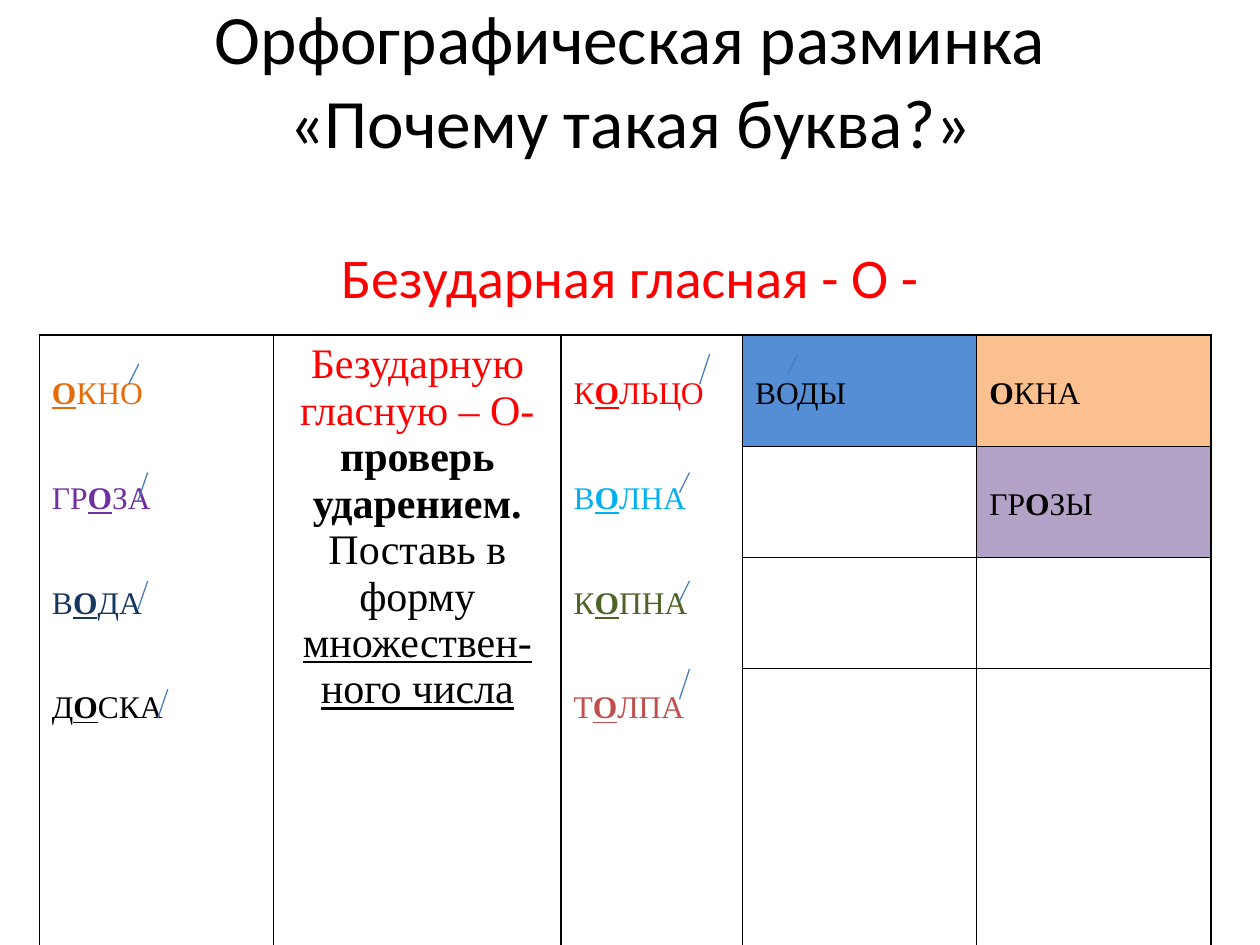
import pptx
import pptx.util
import pptx.dml.color
import pptx.enum.shapes
import pptx.enum.text
import pptx.oxml.ns
from dataclasses import dataclass
from lxml import etree

Pt = pptx.util.Pt
RGB = pptx.dml.color.RGBColor
CENTER = pptx.enum.text.PP_ALIGN.CENTER
ANCHOR = pptx.enum.text.MSO_ANCHOR
qn = pptx.oxml.ns.qn


@dataclass(frozen=True)
class Theme:
    sans: str = "Calibri"
    serif: str = "Times New Roman"
    black: str = "000000"
    red: str = "FF0000"
    mark: str = "4B7EBC"
    title: float = 39.6
    sub: float = 32
    rule: float = 24
    word: float = 18


T = Theme()
VOWEL = "О"
COLS = [133.9, 164.2, 103.7, 133.9, 133.9]
ROWS = [63.5, 63.5, 63.5, 160]
WORD_TOP, WORD_GAP = 23.5, 40
SLANT = 5.7

# Each word: before and after the vowel, colour, stress mark (left, top, height)
LEFT = [
    ("", "КНО", "E46C0A", (51.1, 16.5, 11.5)),
    ("ГР", "ЗА", "7030A0", (56.2, 78.5, 16.6)),
    ("В", "ДА", "17375E", (56.2, 140.5, 16.6)),
    ("Д", "СКА", T.black, (67.7, 202.3, 16.6)),
]
RIGHT = [
    ("К", "ЛЬЦО", T.red, (79.2, 10.8, 17.3)),
    ("В", "ЛНА", "00B0F0", (67.7, 78.5, 11.5)),
    ("К", "ПНА", "4F6228", (67.7, 140.5, 11.5)),
    ("Т", "ЛПА", "C0504D", (67.7, 190.8, 17.3)),
]
RULE = [
    ("Безударную гласную – О- ", dict(color=T.red)),
    ("проверь ударением. ", dict(bold=True)),
    ("Поставь в форму ", {}),
    ("множествен- ного числа", dict(under=True)),
]


def put(para, text, size=T.word, font=T.serif, color=T.black,
        bold=False, under=False):
    run = para.add_run()
    run.text = text
    face = run.font
    face.size, face.name = Pt(size), font
    face.bold, face.underline = bold, under
    face.color.rgb = RGB.from_string(color)


def place(shape, box):
    shape.left, shape.top, shape.width, shape.height = map(Pt, box)


def head(slide, box):
    title = slide.shapes.title
    place(title, box)
    frame = title.text_frame
    frame.auto_size = pptx.enum.text.MSO_AUTO_SIZE.NONE
    frame.vertical_anchor = ANCHOR.MIDDLE
    para = frame.paragraphs[0]
    para.alignment = CENTER
    look = dict(size=T.title, font=T.sans)
    put(para, "Орфографическая разминка", **look)
    para.add_line_break()
    put(para, "«Почему такая буква?»", **look)


def topic(slide, box):
    frame = slide.shapes.add_textbox(*map(Pt, box)).text_frame
    frame.word_wrap = True
    para = frame.paragraphs[0]
    para.alignment = CENTER
    put(para, "Безударная гласная - О -", size=T.sub, font=T.sans, color=T.red)


def edge(cell):
    """Black one-point borders, placed ahead of the fill."""
    props = cell._tc.get_or_add_tcPr()
    for i, side in enumerate(("lnL", "lnR", "lnT", "lnB")):
        line = etree.Element(qn("a:" + side), w=str(Pt(1)))
        fill = etree.SubElement(line, qn("a:solidFill"))
        etree.SubElement(fill, qn("a:srgbClr"), val=T.black)
        props.insert(i, line)


def stress(slide, x, y, mark):
    dx, dy, tall = mark
    x, y = x + dx, y + dy
    line = slide.shapes.add_connector(
        pptx.enum.shapes.MSO_CONNECTOR.STRAIGHT,
        Pt(x + SLANT), Pt(y), Pt(x), Pt(y + tall))
    line.line.color.rgb = RGB.from_string(T.mark)
    line.line.width = Pt(0.75)
    etree.SubElement(line._element.spPr, qn("a:effectLst"))


def spell(para, pre, post, color=T.black, under=False):
    if pre:
        put(para, pre, color=color)
    put(para, VOWEL, color=color, bold=True, under=under)
    put(para, post, color=color)


def words(cell, items):
    cell.margin_top = Pt(WORD_TOP)
    frame = cell.text_frame
    for i, (pre, post, color, _) in enumerate(items):
        para = frame.add_paragraph() if i else frame.paragraphs[0]
        if i:
            para.space_before = Pt(WORD_GAP)
        spell(para, pre, post, color, under=True)


def answer(cell, fill):
    cell.margin_top = Pt(WORD_TOP)
    cell.fill.solid()
    cell.fill.fore_color.rgb = RGB.from_string(fill)
    return cell.text_frame.paragraphs[0]


def chart(slide, box):
    x, y = box
    grid = slide.shapes.add_table(len(ROWS), len(COLS), Pt(x), Pt(y),
                                  Pt(sum(COLS)), Pt(sum(ROWS))).table
    grid.first_row = grid.horz_banding = False
    for col, wide in zip(grid.columns, COLS):
        col.width = Pt(wide)
    for row, tall in zip(grid.rows, ROWS):
        row.height = Pt(tall)
    for cell in grid.iter_cells():
        cell.fill.background()
        edge(cell)
    for c in range(3):
        grid.cell(0, c).merge(grid.cell(len(ROWS) - 1, c))

    # Words and the rule between them
    words(grid.cell(0, 0), LEFT)
    words(grid.cell(0, 2), RIGHT)
    para = grid.cell(0, 1).text_frame.paragraphs[0]
    para.alignment = CENTER
    for text, look in RULE:
        put(para, text, size=T.rule, **look)

    # Plural forms
    put(answer(grid.cell(0, 3), "558ED5"), "ВОДЫ")
    spell(answer(grid.cell(0, 4), "FAC090"), "", "КНА")
    spell(answer(grid.cell(1, 4), "B3A2C7"), "ГР", "ЗЫ")

    # Stress marks
    marks = {0: [w[3] for w in LEFT], 2: [w[3] for w in RIGHT],
             3: [(25.9, 10.8, 11.5)]}
    for c, group in marks.items():
        for mark in group:
            stress(slide, x + sum(COLS[:c]), y, mark)


def main():
    deck = pptx.Presentation()
    deck.slide_width, deck.slide_height = Pt(720), Pt(540)
    slide = deck.slides.add_slide(deck.slide_layouts[5])
    head(slide, (54, 22.5, 612, 45))
    topic(slide, (108, 135, 504, 309))
    chart(slide, (22.5, 191.5))
    deck.save("out.pptx")


if __name__ == "__main__":
    main()
